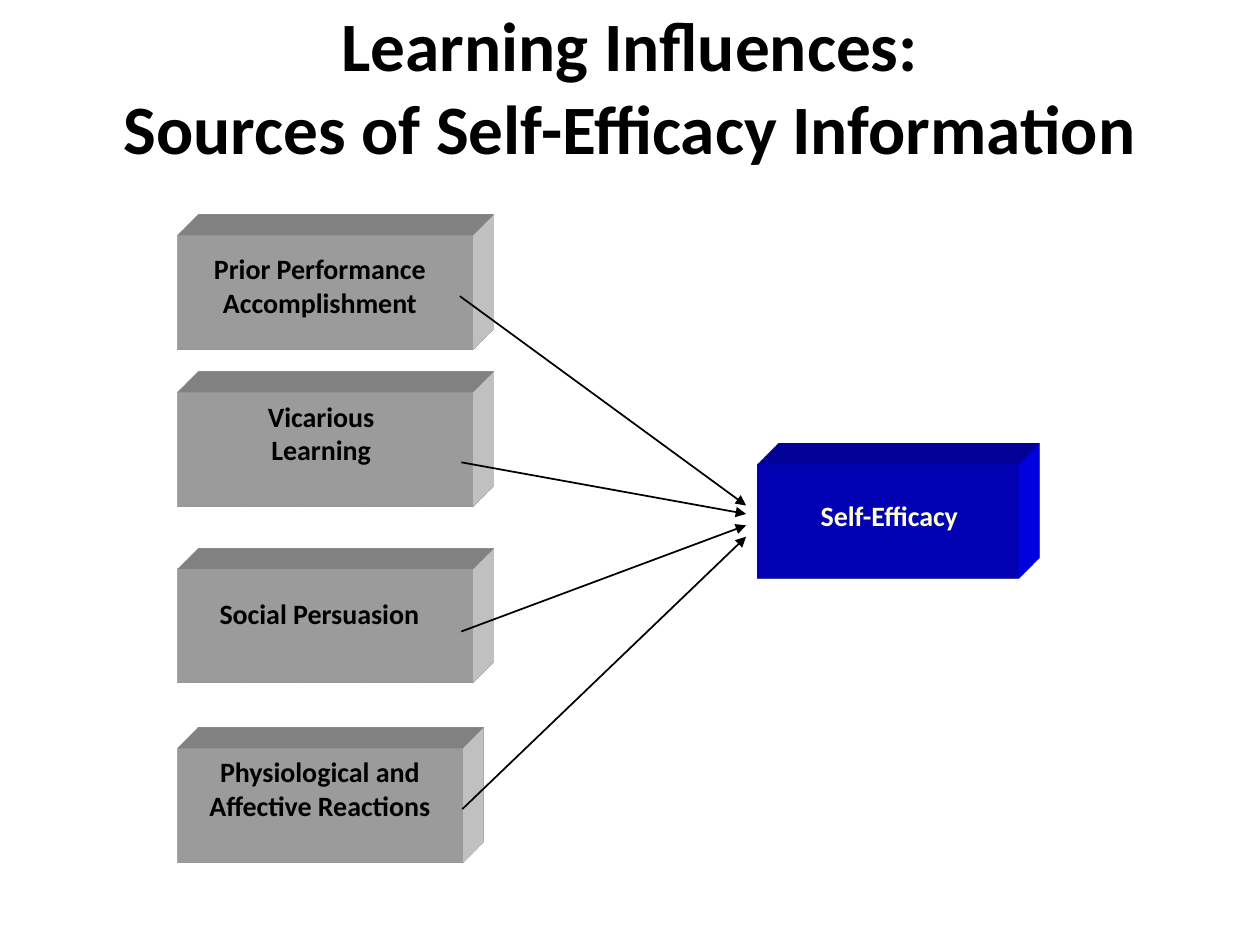
from lxml import etree
from pptx import Presentation
from pptx.dml.color import RGBColor
from pptx.enum import shapes, text
from pptx.oxml.ns import qn
from pptx.util import Cm, Pt

HUES = {"gray": "DDDDDD", "blue": "0000FF", "ink": "000000", "cream": "FFFFCC"}
TITLE = "Learning Influences:\vSources of Self-Efficacy Information"
LEFT, HIGH = 3.58, 2.29
SOURCES = [
    {"text": "Prior Performance\nAccomplishment", "top": 4.75, "wide": 5.94,
     "label": (3.73, 4.95, 5.44), "start": (9.27, 5.97), "end": 10.19},
    {"text": "Vicarious\nLearning", "top": 7.92, "wide": 5.94,
     "label": (4.95, 7.92, 3.05), "start": (9.3, 9.32), "end": 10.36},
    {"text": "Social Persuasion", "top": 11.48, "wide": 5.94,
     "label": (3.76, 11.91, 5.36), "start": (9.3, 12.73), "end": 10.59},
    {"text": "Physiological and\nAffective Reactions", "top": 15.09, "wide": 5.74,
     "label": (3.58, 15.09, 5.74), "start": (9.32, 16.31), "end": 10.82},
]
GOAL = {"text": "Self-Efficacy", "box": (15.27, 9.37, 5.26), "label": (15.67, 9.93, 4.52)}
TIP = 15.04


def color(name):
    return RGBColor.from_string(HUES[name])


def add(parent, tag, **attrs):
    return etree.SubElement(parent, qn(tag), **attrs)


def style(frame, size, hue):
    for para in frame.paragraphs:
        para.alignment = text.PP_ALIGN.CENTER
        for run in para.runs:
            font = run.font
            font.name, font.size, font.bold = "Calibri", Pt(size), True
            font.color.rgb = color(hue)


def block(x, y, wide, hue):
    box = slide.shapes.add_shape(
        shapes.MSO_SHAPE.RECTANGLE, Cm(x), Cm(y), Cm(wide), Cm(HIGH))
    box.shadow.inherit = False
    box.fill.solid()
    box.fill.fore_color.rgb = color(hue)
    box.line.fill.background()
    props = box._element.spPr
    scene = add(props, "a:scene3d")
    add(scene, "a:camera", prst="legacyObliqueTopRight")
    add(scene, "a:lightRig", rig="legacyFlat3", dir="b")
    solid = add(props, "a:sp3d", extrusionH="430200", prstMaterial="legacyMatte")
    for edge in ("a:bevelT", "a:bevelB"):
        add(solid, edge, w="13500", h="13500", prst="angle")
    add(add(solid, "a:extrusionClr"), "a:srgbClr", val=HUES[hue])


def label(words, spot, hue, wrap=False):
    x, y, wide = spot
    high = 1.6 if "\n" in words else 0.91
    frame = slide.shapes.add_textbox(Cm(x), Cm(y), Cm(wide), Cm(high)).text_frame
    frame.word_wrap = wrap
    frame.auto_size = text.MSO_AUTO_SIZE.SHAPE_TO_FIT_TEXT
    frame.text = words
    style(frame, 16, hue)


def arrow(start, end):
    line = slide.shapes.add_connector(
        shapes.MSO_CONNECTOR.STRAIGHT, *map(Cm, (*start, *end)))
    line.line.color.rgb = color("ink")
    line.line.width = Pt(1)
    add(line.line._get_or_add_ln(), "a:tailEnd", type="triangle")
    add(line._element.spPr, "a:effectLst")


deck = Presentation()
deck.slide_width, deck.slide_height = Cm(25.4), Cm(19.05)
slide = deck.slides.add_slide(deck.slide_layouts[5])

title = slide.shapes.title
title.left, title.top, title.width, title.height = map(Cm, (1.27, 0.13, 22.86, 3.18))
title.text_frame.text = TITLE
title.text_frame.vertical_anchor = text.MSO_ANCHOR.MIDDLE
style(title.text_frame, 39.6, "ink")

for item in SOURCES:
    block(LEFT, item["top"], item["wide"], "gray")
block(*GOAL["box"], "blue")
for item in SOURCES:
    label(item["text"], item["label"], "ink")
label(GOAL["text"], GOAL["label"], "cream", wrap=True)
for item in SOURCES:
    arrow(item["start"], (TIP, item["end"]))

deck.save("out.pptx")
